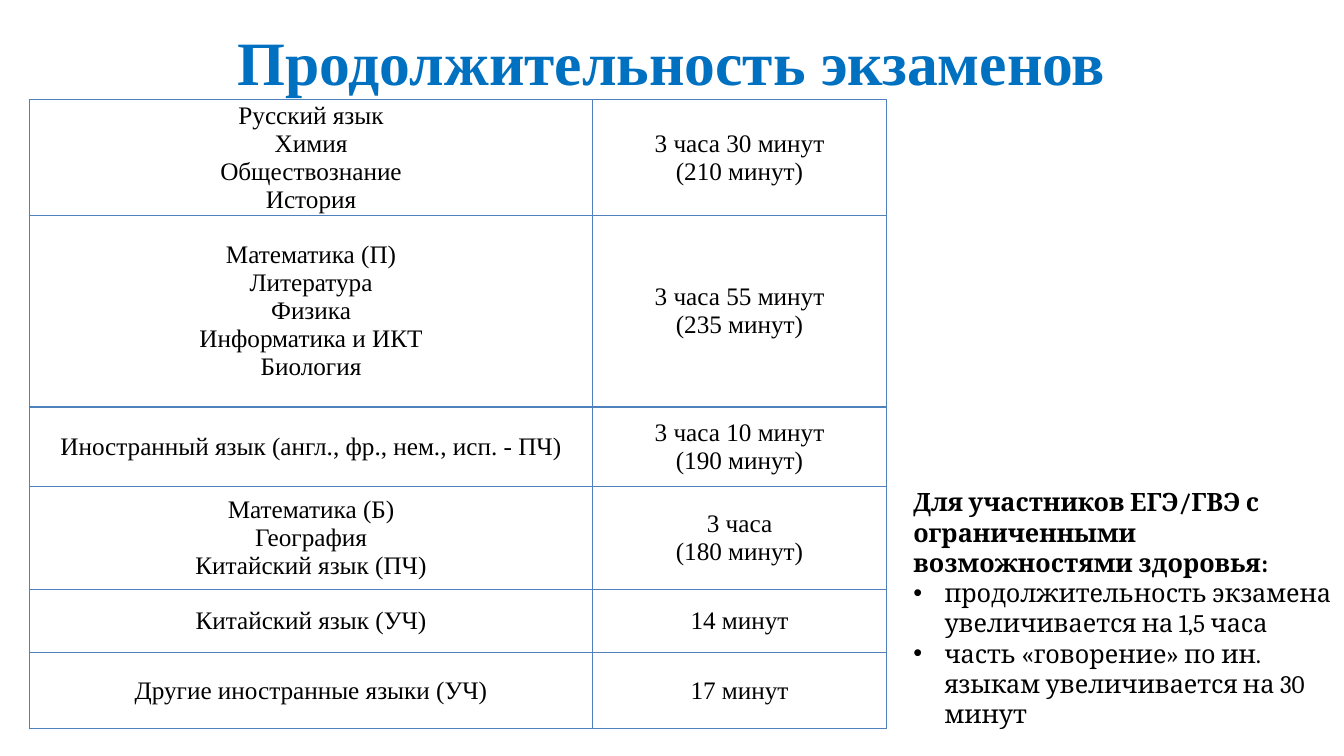
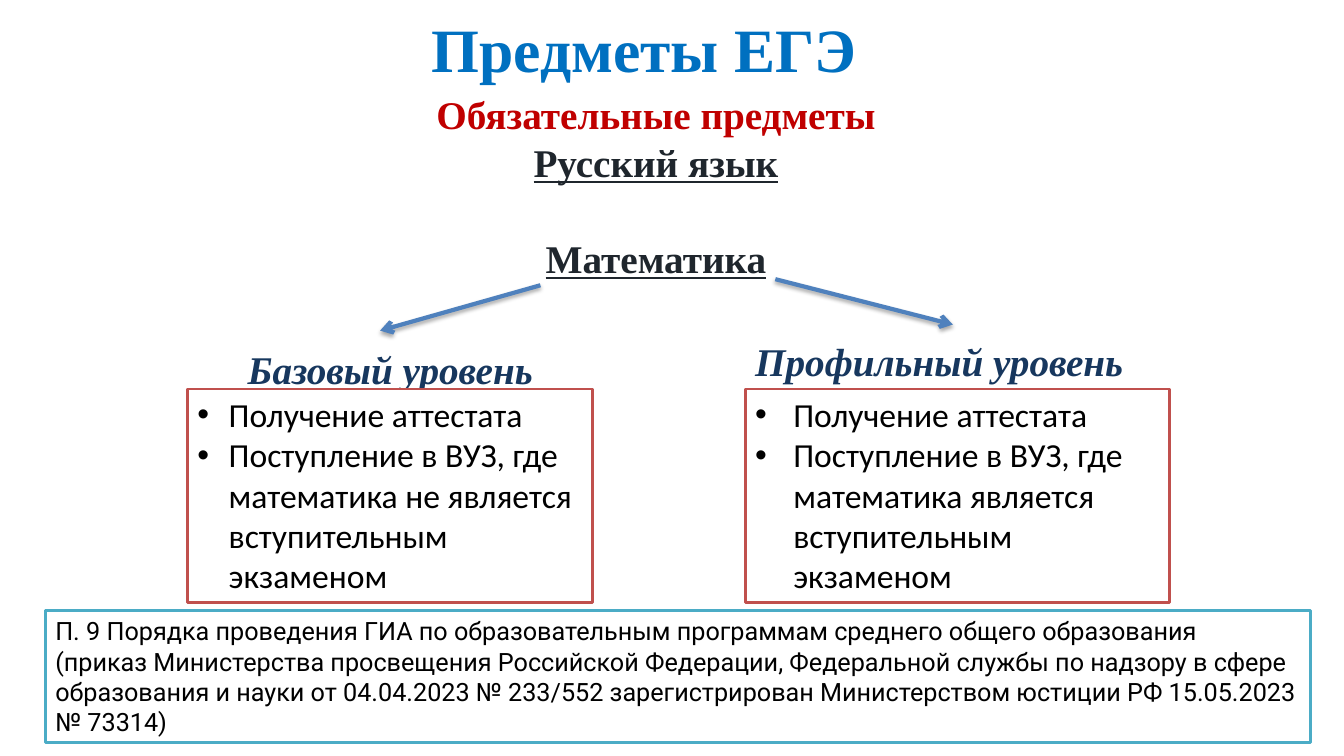
from dataclasses import dataclass

from lxml import etree
from pptx import Presentation
from pptx.dml.color import RGBColor
from pptx.enum.shapes import MSO_CONNECTOR, MSO_SHAPE
from pptx.enum.text import MSO_ANCHOR, MSO_AUTO_SIZE, PP_ALIGN
from pptx.oxml import parse_xml
from pptx.oxml.ns import nsdecls, qn
from pptx.util import Pt

PX = 9144
LEFT, CENTER, JUSTIFY = PP_ALIGN.LEFT, PP_ALIGN.CENTER, PP_ALIGN.JUSTIFY
TOP, MIDDLE = MSO_ANCHOR.TOP, MSO_ANCHOR.MIDDLE
NO_FIT = MSO_AUTO_SIZE.NONE
RECT, STRAIGHT = MSO_SHAPE.RECTANGLE, MSO_CONNECTOR.STRAIGHT


@dataclass(frozen=True)
class Theme:
    """Colours, fonts and type sizes of the deck."""

    blue: str = "0070C0"
    line: str = "4F81BD"
    red: str = "C00000"
    frame: str = "C0504D"
    teal: str = "4BACC6"
    navy: str = "17375E"
    dark: str = "1F262D"
    black: str = "000000"
    white: str = "FFFFFF"
    serif: str = "Times New Roman"
    note: str = "Cambria"
    sans: str = "Calibri"
    legal: str = "Roboto"
    huge: int = 44
    big: int = 28
    mid: int = 24
    small: int = 18


T = Theme()


def look(name, size, color, **more):
    """Gather the format values of a run."""
    return {"name": name, "size": Pt(size), "color": color, **more}


TITLE = look(T.serif, T.huge, T.blue, bold=True)
HEAD = look(T.serif, T.big, T.red, bold=True)
TOPIC = look(T.serif, T.big, T.dark, bold=True, underline=True)
LEVEL = look(T.serif, T.big, T.navy, bold=True, italic=True)
CELL = look(T.serif, T.small, T.black)
NOTE = look(T.note, T.small, T.black)
LEAD = {**NOTE, "bold": True}
ITEM = look(T.sans, T.mid, T.black)
LEGAL = look(T.legal, T.small, T.black)

EXAMS = [
    (114, ["Русский язык", "Химия", "Обществознание", "История"],
     ["3 часа 30 минут", "(210 минут)"]),
    (190, ["Математика (П)", "Литература", "Физика", "Информатика и ИКТ",
           "Биология"],
     ["3 часа 55 минут", "(235 минут)"]),
    (79, ["Иностранный язык (англ., фр., нем., исп. - ПЧ)"],
     ["3 часа 10 минут", "(190 минут)"]),
    (102, ["Математика (Б)", "География", "Китайский язык (ПЧ)"],
     ["3 часа", "(180 минут)"]),
    (63, ["Китайский язык (УЧ)"], ["14 минут"]),
    (75, ["Другие иностранные языки (УЧ)"], ["17 минут"]),
]


def px(*vals):
    """Turn px lengths into EMU."""
    return [val * PX for val in vals]


def rgb(code):
    """Make a colour from its hex code."""
    return RGBColor.from_string(code)


def apply(obj, vals):
    """Set each value of a dict on an object."""
    for key, val in vals.items():
        if key == "color":
            obj.color.rgb = rgb(val)
        else:
            setattr(obj, key, val)


def line(text, style, dent=0, **form):
    """Describe one paragraph."""
    return text, style, dent, form


def bullet(para, dent):
    """Give a paragraph a hanging bullet."""
    props = para._p.get_or_add_pPr()
    props.set("marL", str(dent * PX))
    props.set("indent", str(-dent * PX))
    etree.SubElement(props, qn("a:buFont")).set("typeface", "Arial")
    etree.SubElement(props, qn("a:buChar")).set("char", "•")


def write(frame, lines, anchor=TOP):
    """Fill a text frame with paragraphs."""
    apply(frame, {"word_wrap": True, "auto_size": NO_FIT,
                  "vertical_anchor": anchor})
    for num, (text, style, dent, form) in enumerate(lines):
        para = frame.add_paragraph() if num else frame.paragraphs[0]
        apply(para, {"alignment": LEFT, **form})
        if dent:
            bullet(para, dent)
        run = para.add_run()
        run.text = text
        apply(run.font, style)


def title(slide, text, at, align, anchor):
    """Move and fill the title placeholder."""
    shape = slide.shapes.title
    apply(shape, dict(zip(("left", "top", "width", "height"), px(*at))))
    write(shape.text_frame, [line(text, TITLE, alignment=align)], anchor)


def label(slide, at, lines):
    """Add a plain text box."""
    write(slide.shapes.add_textbox(*px(*at)).text_frame, lines)


def box(slide, at, edge, lines):
    """Add a white box with a coloured edge."""
    shape = slide.shapes.add_shape(RECT, *px(*at))
    shape.shadow.inherit = False
    shape.fill.solid()
    shape.fill.fore_color.rgb = rgb(T.white)
    apply(shape.line, {"color": edge, "width": Pt(2)})
    write(shape.text_frame, lines)


def arrow(slide, start, end):
    """Add an arrow with a soft shadow."""
    link = slide.shapes.add_connector(STRAIGHT, *px(*start, *end))
    apply(link.line, {"color": T.line, "width": Pt(3)})
    etree.SubElement(link.line._get_or_add_ln(),
                     qn("a:tailEnd")).set("type", "arrow")
    link._element.spPr.append(parse_xml(
        f'<a:effectLst {nsdecls("a")}>'
        f'<a:outerShdw blurRad="{Pt(3.1)}" dist="{Pt(1.8)}" dir="5400000" '
        f'rotWithShape="0"><a:srgbClr val="{T.black}">'
        '<a:alpha val="35000"/></a:srgbClr></a:outerShdw></a:effectLst>'))


def border(cell):
    """Draw the four sides of a cell."""
    props = cell._tc.get_or_add_tcPr()
    for side in "LRTB":
        props.append(parse_xml(
            f'<a:ln{side} {nsdecls("a")} w="{Pt(1)}"><a:solidFill>'
            f'<a:srgbClr val="{T.line}"/></a:solidFill></a:ln{side}>'))


def grid(slide, at, cols, rows):
    """Add a bordered table of centred lines."""
    high = sum(row[0] for row in rows)
    table = slide.shapes.add_table(
        len(rows), len(cols), *px(*at, sum(cols), high)).table
    apply(table, {"first_row": False, "horz_banding": False})
    for col, wide in zip(table.columns, cols):
        col.width = wide * PX
    sides = ("left", "right", "top", "bottom")
    for row, (tall, *cells) in zip(table.rows, rows):
        row.height = tall * PX
        for cell, texts in zip(row.cells, cells):
            apply(cell, {f"margin_{side}": 2 * PX for side in sides})
            border(cell)
            cell.fill.background()
            write(cell.text_frame,
                  [line(text, CELL, alignment=CENTER) for text in texts])
            cell.vertical_anchor = MIDDLE


def times(slide):
    """Build the slide on exam length."""
    title(slide, "Продолжительность экзаменов", (0, 2, 1333, 117),
          CENTER, MIDDLE)
    grid(slide, (29, 99), (559, 291), EXAMS)
    label(slide, (896, 478, 437, 250), [
        line("Для участников ЕГЭ/ГВЭ с ограниченными возможностями здоровья:",
             LEAD),
        line("продолжительность экзамена увеличивается на 1,5 часа", NOTE, 31),
        line("часть «говорение» по ин. языкам увеличивается на 30 минут",
             NOTE, 31),
    ])


def level(slide, name, at, left, wide, dent, goal):
    """Add a level name above its box of goals."""
    label(slide, at, [line(name, LEVEL, alignment=CENTER, line_spacing=1.5)])
    box(slide, (left, 386, wide, 212), T.frame, [
        line(text, ITEM, dent) for text in ("Получение аттестата", goal)])


def topics(slide):
    """Build the slide on exam subjects."""
    title(slide, "Предметы ЕГЭ", (418, 6, 500, 84), LEFT, TOP)
    label(slide, (312, 61, 677, 222), [
        line("Обязательные предметы", HEAD, alignment=CENTER,
             line_spacing=1.5),
        line("Русский язык", TOPIC, alignment=CENTER, space_before=Pt(1)),
        line("Математика", TOPIC, alignment=CENTER, space_before=Pt(35)),
    ])
    level(slide, "Базовый уровень", (210, 314, 354, 81), 186, 402, 31,
          "Поступление в ВУЗ, где математика не является "
          "вступительным экзаменом")
    level(slide, "Профильный уровень", (703, 306, 457, 81), 739, 421, 38,
          "Поступление в ВУЗ, где математика является "
          "вступительным экзаменом")
    arrow(slide, (536, 283), (377, 328))
    arrow(slide, (769, 277), (945, 322))
    box(slide, (45, 606, 1255, 131), T.teal, [
        line("П. 9 Порядка проведения ГИА по образовательным программам "
             "среднего общего образования", LEGAL, alignment=JUSTIFY),
        line("(приказ Министерства просвещения Российской Федерации, "
             "Федеральной службы по надзору в сфере образования и науки "
             "от 04.04.2023 № 233/552 зарегистрирован Министерством юстиции "
             "РФ 15.05.2023 № 73314)", LEGAL),
    ])


def main():
    """Build and save the deck."""
    deck = Presentation()
    deck.slide_width, deck.slide_height = px(1333, 750)
    for build in (times, topics):
        build(deck.slides.add_slide(deck.slide_layouts[5]))
    deck.save("out.pptx")


if __name__ == "__main__":
    main()
